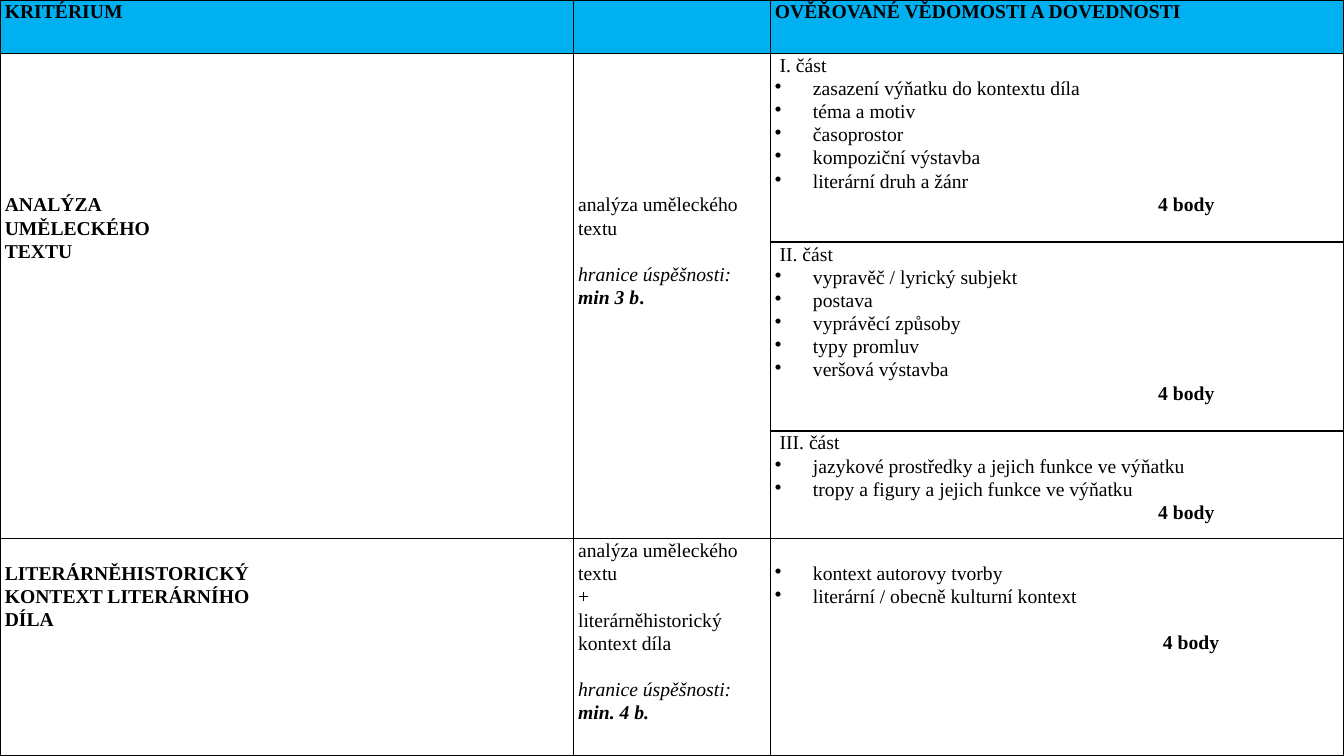
from lxml.etree import SubElement
from pptx import Presentation
from pptx.dml.color import RGBColor
from pptx.oxml import parse_xml
from pptx.oxml.ns import nsdecls, qn
from pptx.util import Cm, Pt

COLORS = {"header": "00B0F0", "body": "FFFFFF", "ink": "000000"}
FONT = {"name": "Times New Roman", "size": Pt(14), "bold": False, "italic": False}
STYLES = {
    "plain": {},
    "bold": {"bold": True},
    "italic": {"italic": True},
    "minimum": {"bold": True, "italic": True},
}
PAGE = (Cm(33.87), Cm(19.05))
COLUMNS = (14.45, 4.96, 14.46)
ROWS = (1.34, 4.76, 4.76, 2.71, 5.48)
LINE_GAP = Pt(16.5)
HANG = Cm(0.96)
PART_INDENT = Cm(0.12)
POINTS_INDENT = Cm(9.66)


def line(text, style="plain", indent=0, bullet=False, gap=0):
    """Describe a paragraph with a single text run."""
    return {"runs": [(text, style)], "indent": indent, "bullet": bullet, "gap": gap}


def part(title, topics):
    """Describe a numbered part with its topics and points."""
    return [line(title, indent=PART_INDENT), *bullets(topics), points()]


def bullets(topics):
    """Describe a bulleted list."""
    return [line(topic, indent=HANG, bullet=True) for topic in topics]


def points(indent=POINTS_INDENT, gap=0):
    """Describe the line that gives the points."""
    return line("4 body", "bold", indent, gap=gap)


def threshold(*runs):
    """Describe the pass threshold under an analysis."""
    return [line("hranice úspěšnosti:", "italic", gap=LINE_GAP),
            {**line(""), "runs": runs}]


def headings(*texts):
    """Describe a stack of bold lines."""
    return [line(text, "bold") for text in texts]


CELLS = {
    (0, 0): headings("KRITÉRIUM"),
    (0, 2): headings("OVĚŘOVANÉ VĚDOMOSTI A DOVEDNOSTI"),
    (1, 0): headings("ANALÝZA", "UMĚLECKÉHO", "TEXTU"),
    (1, 1): [line("analýza uměleckého textu"),
             *threshold(("min 3 b", "minimum"), (".", "bold"))],
    (1, 2): part("I. část", ["zasazení výňatku do kontextu díla", "téma a motiv",
                             "časoprostor", "kompoziční výstavba",
                             "literární druh a žánr"]),
    (2, 2): part("II. část", ["vypravěč / lyrický subjekt", "postava",
                              "vyprávěcí způsoby", "typy promluv",
                              "veršová výstavba"]),
    (3, 2): part("III. část", ["jazykové prostředky a jejich funkce ve výňatku",
                               "tropy a figury a jejich funkce ve výňatku"]),
    (4, 0): headings("LITERÁRNĚHISTORICKÝ", "KONTEXT LITERÁRNÍHO", "DÍLA"),
    (4, 1): [line("analýza uměleckého textu"), line("+"),
             line("literárněhistorický kontext díla"),
             *threshold(("min. 4 b.", "minimum"))],
    (4, 2): [*bullets(["kontext autorovy tvorby",
                       "literární / obecně kulturní kontext"]),
             points(POINTS_INDENT + PART_INDENT, LINE_GAP)],
}
TOP_MARGINS = {(1, 0): Cm(3.52), (1, 1): Cm(3.52), (4, 0): Cm(0.58), (4, 2): Cm(0.58)}


def set_attributes(target, values):
    """Set each named value on the target."""
    for name, value in values.items():
        setattr(target, name, value)


def write_paragraph(para, content):
    """Write one described paragraph with its indent, bullet and runs."""
    set_attributes(para, {"line_spacing": 1.07, "space_before": content["gap"]})
    properties = para._p.get_or_add_pPr()
    properties.set("marL", str(content["indent"]))
    properties.set("indent", str(-HANG if content["bullet"] else 0))
    if content["bullet"]:
        SubElement(properties, qn("a:buChar"), char="•")
    for text, style in content["runs"]:
        span = para.add_run()
        span.text = text
        set_attributes(span.font, {**FONT, **STYLES[style]})
        span.font.color.rgb = RGBColor.from_string(COLORS["ink"])


def format_cell(cell, color, top):
    """Give a cell its fill, margins and black borders."""
    set_attributes(cell, {"margin_left": Cm(0.12), "margin_right": Cm(0.12),
                          "margin_top": top, "margin_bottom": 0})
    cell.fill.solid()
    cell.fill.fore_color.rgb = RGBColor.from_string(color)
    properties = cell._tc.get_or_add_tcPr()
    for position, side in enumerate("LRTB"):
        properties.insert(position, parse_xml(
            f'<a:ln{side} {nsdecls("a")} w="{Pt(1)}"><a:solidFill>'
            f'<a:srgbClr val="{COLORS["ink"]}"/></a:solidFill></a:ln{side}>'))


def draw_criteria_table(page, box):
    """Draw the table of criteria in the given box."""
    table = page.shapes.add_table(len(ROWS), len(COLUMNS), *box).table
    set_attributes(table, {"first_row": False, "horz_banding": False})
    for column, width in zip(table.columns, COLUMNS):
        column.width = int(box[2] * width / sum(COLUMNS))
    for row, height in zip(table.rows, ROWS):
        row.height = int(box[3] * height / sum(ROWS))
    for row in range(len(ROWS)):
        for column in range(len(COLUMNS)):
            place = (row, column)
            cell = table.cell(*place)
            format_cell(cell, COLORS["body" if row else "header"],
                        TOP_MARGINS.get(place, 0))
            frame = cell.text_frame
            for number, content in enumerate(CELLS.get(place, [])):
                para = frame.add_paragraph() if number else frame.paragraphs[0]
                write_paragraph(para, content)
    for column in (0, 1):
        table.cell(1, column).merge(table.cell(3, column))


def main():
    """Build the deck and save it."""
    deck = Presentation()
    set_attributes(deck, dict(zip(("slide_width", "slide_height"), PAGE)))
    page = deck.slides.add_slide(deck.slide_layouts[6])
    draw_criteria_table(page, (0, 0, *PAGE))
    deck.save("out.pptx")


if __name__ == "__main__":
    main()
